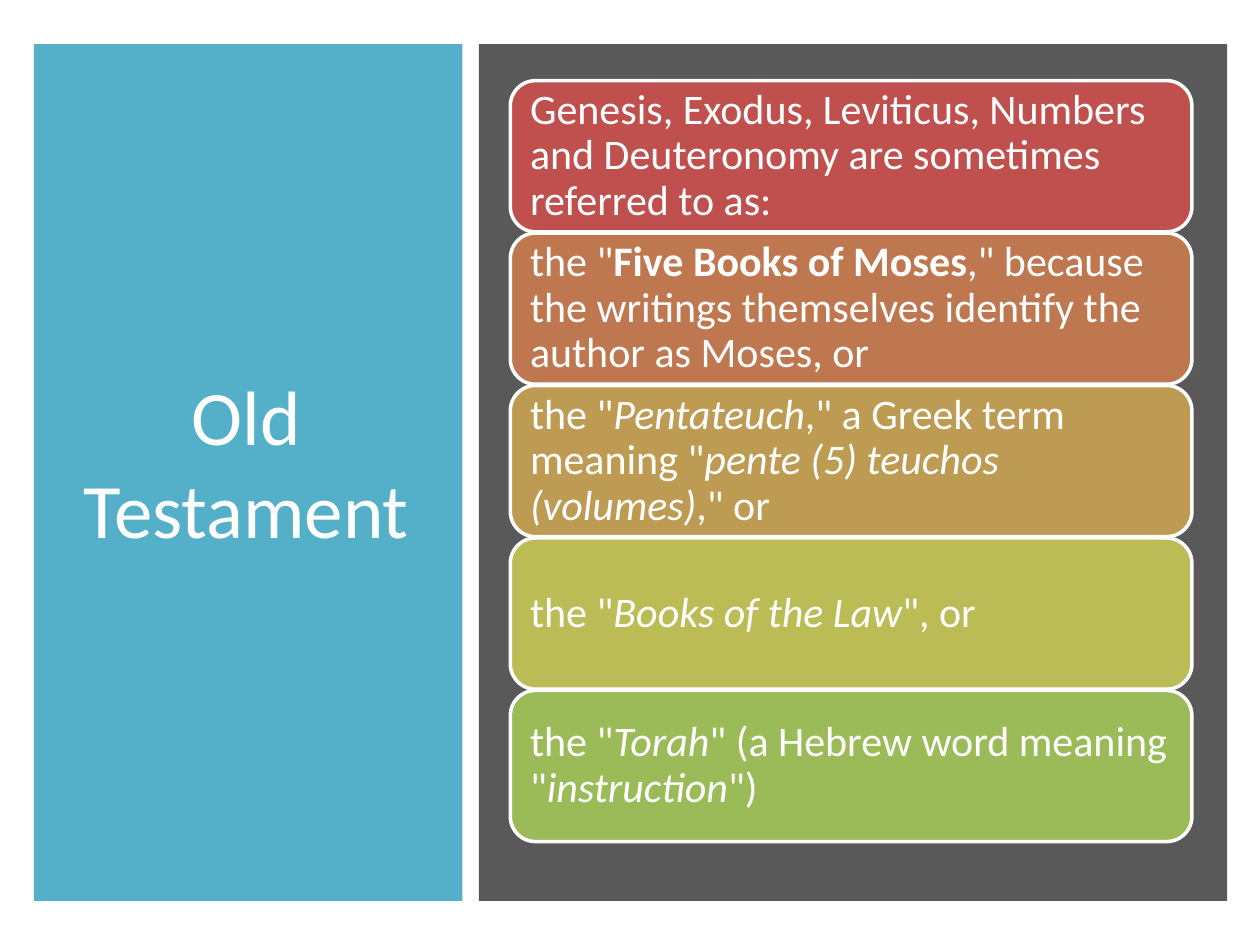
import pptx
import pptx.util
import pptx.dml.color
import pptx.enum.shapes
import pptx.enum.text
import pptx.oxml
import pptx.oxml.ns

Inches = pptx.util.Inches
Pt = pptx.util.Pt
RGB = pptx.dml.color.RGBColor
SHAPE = pptx.enum.shapes.MSO_SHAPE
ALIGN = pptx.enum.text.PP_ALIGN
MIDDLE = pptx.enum.text.MSO_ANCHOR.MIDDLE

WHITE = RGB(0xFF, 0xFF, 0xFF)
TEAL = RGB(0x4B, 0xAC, 0xC6)
GRAY = RGB(0x59, 0x59, 0x59)
RED = RGB(0xC0, 0x50, 0x4D)
RUST = RGB(0xBF, 0x77, 0x50)
GOLD = RGB(0xBD, 0x9B, 0x53)
OLIVE = RGB(0xBC, 0xBC, 0x56)
GREEN = RGB(0x9B, 0xBB, 0x59)

# Each card: fill and runs of (text, style), where style is "", "b" or "i"
CARDS = [
    (RED, [("Genesis, Exodus, Leviticus, Numbers and Deuteronomy "
            "are sometimes referred to as:", "")]),
    (RUST, [('the "', ""), ("Five Books of Moses", "b"),
            ('," because the writings themselves identify '
             "the author as Moses, or", "")]),
    (GOLD, [('the "', ""), ("Pentateuch", "i"),
            ('," a Greek term meaning "', ""),
            ("pente (5) teuchos (volumes)", "i"), ('," or', "")]),
    (OLIVE, [('the "', ""), ("Books of the Law", "i"), ('", or', "")]),
    (GREEN, [('the "', ""), ("Torah", "i"),
             ('" (a Hebrew word meaning "', ""),
             ("instruction", "i"), ('")', "")]),
]


class Deck:
    """Holds the text style and the current slide."""

    def __init__(self, slide, face="Calibri", ink=WHITE):
        self.slide, self.face, self.ink = slide, face, ink

    def style(self, para, size, align):
        para.alignment = align
        para.font.name = self.face
        para.font.size = Pt(size)
        para.font.color.rgb = self.ink

    def shape(self, kind, box, fill):
        item = self.slide.shapes.add_shape(kind, *map(Inches, box))
        item.shadow.inherit = False
        item.fill.solid()
        item.fill.fore_color.rgb = fill
        item.line.fill.background()
        return item

    def panel(self, box, fill, alpha=100):
        item = self.shape(SHAPE.RECTANGLE, box, fill)
        if alpha < 100:
            color = item.element.spPr.find(".//" + pptx.oxml.ns.qn("a:srgbClr"))
            color.append(pptx.oxml.parse_xml(
                f'<a:alpha {pptx.oxml.ns.nsdecls("a")} val="{alpha * 1000}"/>'))
        return item

    def title(self, box, text):
        item = self.slide.shapes.title
        item.left, item.top, item.width, item.height = map(Inches, box)
        frame = item.text_frame
        frame.text = text
        frame.word_wrap = True
        frame.vertical_anchor = MIDDLE
        self.style(frame.paragraphs[0], 44, ALIGN.CENTER)
        return item

    def card(self, box, fill, runs):
        item = self.shape(SHAPE.ROUNDED_RECTANGLE, box, fill)
        item.line.color.rgb = WHITE
        item.line.width = Pt(2)
        frame = item.text_frame
        frame.word_wrap = True
        frame.vertical_anchor = MIDDLE
        frame.margin_left = frame.margin_right = Inches(0.1)
        frame.margin_top = frame.margin_bottom = Inches(0.1)
        para = frame.paragraphs[0]
        para.line_spacing = 0.9
        self.style(para, 24, ALIGN.LEFT)
        for text, mark in runs:
            run = para.add_run()
            run.text = text
            if mark == "b":
                run.font.bold = True
            elif mark == "i":
                run.font.italic = True


def main():
    prs = pptx.Presentation()
    prs.slide_width, prs.slide_height = Inches(10), Inches(7.5)
    deck = Deck(prs.slides.add_slide(prs.slide_layouts[5]))

    # Title on its panel, with the panel behind
    side = deck.panel((0.27, 0.35, 3.4, 6.8), TEAL, alpha=95)
    title = deck.title((0.43, 0.64, 3.05, 6.04), "Old Testament")
    title.element.addprevious(side.element)

    # Stack of cards on the dark panel
    deck.panel((3.8, 0.35, 5.94, 6.8), GRAY)
    for row, (fill, runs) in enumerate(CARDS):
        deck.card((4.05, 0.64 + row * 1.21, 5.41, 1.2), fill, runs)

    prs.save("out.pptx")


if __name__ == "__main__":
    main()
